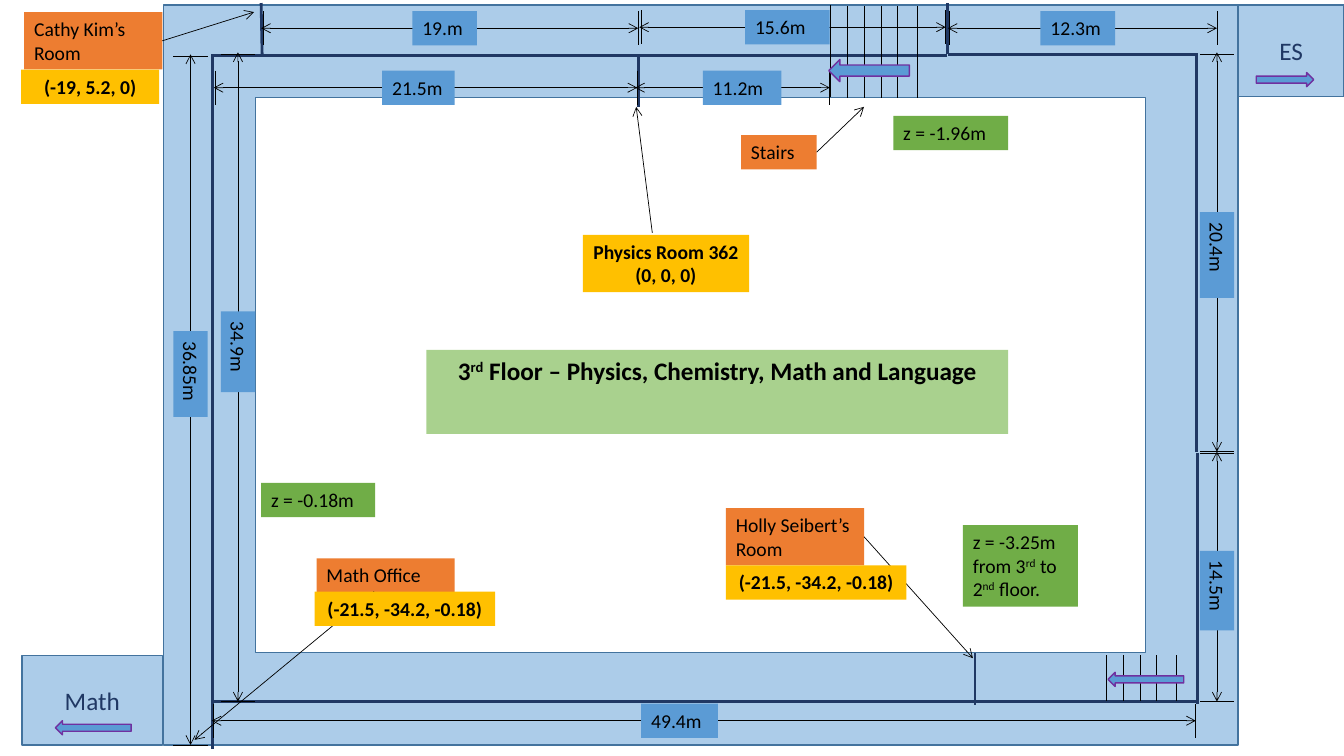
from lxml import etree
from pptx import Presentation
from pptx.dml.color import RGBColor
from pptx.enum.shapes import MSO_CONNECTOR, MSO_SHAPE
from pptx.enum.text import MSO_ANCHOR, MSO_AUTO_SIZE, PP_ALIGN
from pptx.oxml.ns import qn
from pptx.util import Cm, Pt

STRAIGHT = MSO_CONNECTOR.STRAIGHT
RECTANGLE, FRAME = MSO_SHAPE.RECTANGLE, MSO_SHAPE.FRAME
LEFT_ARROW, RIGHT_ARROW = MSO_SHAPE.LEFT_ARROW, MSO_SHAPE.RIGHT_ARROW
TOP, MIDDLE = MSO_ANCHOR.TOP, MSO_ANCHOR.MIDDLE
LEFT, CENTER = PP_ALIGN.LEFT, PP_ALIGN.CENTER
FIT_SHAPE, FIT_NONE = MSO_AUTO_SIZE.SHAPE_TO_FIT_TEXT, MSO_AUTO_SIZE.NONE
RIGHT_SIDE = 3

BLACK, NAVY, BLUE, BLUE_EDGE = "000000", "203864", "5B9BD5", "43739E"
ORANGE, GREEN, GOLD, LIGHT_GREEN, PURPLE = "ED7D31", "70AD47", "FFC000", "A9D18E", "7030A0"
LABEL_HEIGHT = 0.34
TICK_INSET = 0.02
STEP_OFFSETS = (0, 0.17, 0.34, 0.5, 0.7)

WALLS = [
    (2.11, 0.55, 6.32, 0.55), (6.32, 0.55, 9.39, 0.55), (2.59, 0.03, 2.6, 0.55),
    (6.33, 0.55, 6.33, 1.06), (9.4, 0.03, 9.4, 0.54), (9.4, 0.54, 11.88, 0.54),
    (2.11, 0.54, 2.11, 7.43), (2.12, 6.96, 11.88, 6.96), (11.87, 0.54, 11.87, 4.48),
    (11.88, 4.49, 11.88, 6.98), (9.67, 6.99, 9.67, 6.48),
]
HORIZONTAL_DIMENSIONS = [
    ("19.m", 2.59, 6.33, 0.28, 4.41, 0.64), ("21.5m", 2.12, 6.32, 0.87, 4.15, 0.72),
    ("15.6m", 6.34, 9.38, 0.27, 7.81, 0.84), ("12.3m", 9.4, 12.07, 0.28, 10.69, 0.74),
    ("11.2m", 6.3, 8.23, 0.87, 7.36, 0.78), ("49.4m", 2.1, 11.86, 7.15, 6.74, 0.76),
]
VERTICAL_DIMENSIONS = [
    ("34.9m", 0.52, 6.96, 2.36, 3.49, 0.8), ("36.85m", 0.54, 7.39, 1.89, 3.71, 0.85),
    ("20.4m", 0.52, 4.48, 12.07, 2.53, 0.85), ("14.5m", 4.48, 6.96, 12.07, 5.86, 0.79),
]
ROOMS = [
    ("Cathy Kim’s Room", (0.24, 0.12, 1.37, 0.57), (2.52, 0.12)),
    ("Holly Seibert’s Room", (7.2, 5.04, 1.37, 0.57), (9.65, 6.53)),
    ("Stairs", (7.35, 1.34, 0.75, LABEL_HEIGHT), (8.57, 1.06)),
]
HEIGHTS = [
    ("z = -1.96m", (8.86, 1.15, 1.14, LABEL_HEIGHT)),
    ("z = -0.18m", (2.59, 4.79, 1.13, LABEL_HEIGHT)),
    ("z = -3.25m from 3^rd^ to 2^nd^ floor.", (9.55, 5.21, 1.14, 0.81)),
]
COORDINATES = [
    ("(-19, 5.2, 0)", (0.21, 0.69, 1.37, LABEL_HEIGHT)),
    ("(-21.5, -34.2, -0.18)", (3.12, 5.87, 1.79, LABEL_HEIGHT)),
    ("(-21.5, -34.2, -0.18)", (7.2, 5.61, 1.79, LABEL_HEIGHT)),
    ("Physics Room 362\n(0, 0, 0)", (5.78, 2.33, 1.65, 0.57)),
]
WINGS = [("Math", (0.22, 6.5, 1.39, 0.89)), ("ES", (12.28, 0.05, 1.05, 0.91))]
ARROWS = [
    (LEFT_ARROW, (10.99, 6.67, 0.75, 0.14)), (LEFT_ARROW, (0.55, 7.15, 0.75, 0.14)),
    (RIGHT_ARROW, (12.46, 0.72, 0.57, 0.14)), (LEFT_ARROW, (8.22, 0.59, 0.8, 0.22)),
]


def lengths(values):
    """Turn plan measures in inches into lengths."""
    return [Cm(value * 2.54) for value in values]


def color(value):
    """Turn a hex string into a colour."""
    return RGBColor.from_string(value)


def add_block(shapes, kind, box, fill, edge=None, opacity=None):
    """Add a filled preset shape."""
    shape = shapes.add_shape(kind, *lengths(box))
    shape.shadow.inherit = False
    shape.fill.solid()
    shape.fill.fore_color.rgb = color(fill)
    if opacity:
        fill_color = shape._element.spPr.find(qn("a:solidFill"))[0]
        etree.SubElement(fill_color, qn("a:alpha"), val=str(opacity * 1000))
    if edge:
        shape.line.color.rgb = color(edge)
        shape.line.width = Pt(1)
    else:
        shape.line.fill.background()
    return shape


def write(shape, text, size=14, ink=BLACK, bold=False, align=LEFT, anchor=TOP, fit=FIT_SHAPE):
    """Write paragraphs, with the parts between carets as superscript."""
    frame = shape.text_frame
    frame.word_wrap = True
    frame.auto_size = fit
    frame.vertical_anchor = anchor
    for index, line in enumerate(text.split("\n")):
        paragraph = frame.add_paragraph() if index else frame.paragraphs[0]
        paragraph.alignment = align
        for position, piece in enumerate(line.split("^")):
            run = paragraph.add_run()
            run.text = piece
            run.font.name = "Calibri"
            run.font.size = Pt(size)
            run.font.bold = bold
            run.font.color.rgb = color(ink)
            if position % 2:
                run._r.get_or_add_rPr().set("baseline", "30000")


def add_label(shapes, text, box, fill, **style):
    """Add a borderless text label."""
    shape = add_block(shapes, RECTANGLE, box, fill)
    write(shape, text, **style)
    return shape


def add_line(shapes, ends, ink=BLACK, width=0.5, arrowheads=()):
    """Add a straight line with optional open arrowheads."""
    connector = shapes.add_connector(STRAIGHT, *lengths(ends))
    connector.line.color.rgb = color(ink)
    connector.line.width = Pt(width)
    properties = connector._element.spPr
    for end in arrowheads:
        etree.SubElement(properties.find(qn("a:ln")), qn(end), type="arrow")
    etree.SubElement(properties, qn("a:effectLst"))
    return connector


def add_dimension(slide, text, start, end, level, middle, width, vertical=False):
    """Add a measured span with end ticks and a label."""
    shapes = slide.shapes.add_group_shape().shapes
    half = LABEL_HEIGHT / 2
    spans = [(start, level, end, level)]
    spans += [(tick, level - half, tick, level + half) for tick in (start + TICK_INSET, end)]
    for index, (x1, y1, x2, y2) in enumerate(spans):
        ends = (y1, x1, y2, x2) if vertical else (x1, y1, x2, y2)
        add_line(shapes, ends, arrowheads=() if index else ("a:headEnd", "a:tailEnd"))
    x, y = (level, middle) if vertical else (middle, level)
    label = add_label(shapes, text, (x - width / 2, y - half, width, LABEL_HEIGHT), BLUE)
    label.rotation = 90 if vertical else 0


def add_stairs(slide, left, top, bottom):
    """Add a group of step lines."""
    shapes = slide.shapes.add_group_shape().shapes
    for offset in STEP_OFFSETS:
        add_line(shapes, (left + offset, top, left + offset, bottom))


def add_title(slide):
    """Place and format the floor title."""
    title = slide.shapes.title
    title.left, title.top, title.width, title.height = lengths((4.23, 3.47, 5.77, 0.4))
    title.fill.solid()
    title.fill.fore_color.rgb = color(LIGHT_GREEN)
    write(title, "3^rd^ Floor – Physics, Chemistry, Math and Language", 18, bold=True, align=CENTER)


def main():
    """Build the floor plan slide."""
    presentation = Presentation()
    presentation.slide_width, presentation.slide_height = lengths((13.33, 7.5))
    slide = presentation.slides.add_slide(presentation.slide_layouts[5])
    shapes = slide.shapes
    add_title(slide)
    corridor = add_block(shapes, FRAME, (1.62, 0.05, 10.66, 7.34), BLUE, BLUE_EDGE, 50)
    corridor.adjustments[0] = 0.125
    for wall in WALLS:
        add_line(shapes, wall, NAVY, 2)
    for dimension in HORIZONTAL_DIMENSIONS:
        add_dimension(slide, *dimension)
    for dimension in VERTICAL_DIMENSIONS:
        add_dimension(slide, *dimension, vertical=True)
    add_line(shapes, (8.24, 0.05, 8.24, 0.96))
    add_stairs(slide, 8.4, 0.06, 0.97)
    add_stairs(slide, 10.97, 6.5, 6.95)
    for text, box, target in ROOMS:
        room = add_label(shapes, text, box, ORANGE)
        left, top, width, height = box
        pointer = add_line(shapes, (left + width, top + height / 2, *target), arrowheads=["a:tailEnd"])
        pointer.begin_connect(room, RIGHT_SIDE)
    add_label(shapes, "Math Office", (3.14, 5.54, 1.37, LABEL_HEIGHT), ORANGE)
    for ends in ((3.71, 5.87, 1.93, 7.34), (6.47, 2.31, 6.31, 1.06)):
        add_line(shapes, ends, arrowheads=["a:tailEnd"])
    for text, box in HEIGHTS:
        add_label(shapes, text, box, GREEN)
    for text, box in COORDINATES:
        add_label(shapes, text, box, GOLD, bold=True, align=CENTER)
    for text, box in WINGS:
        wing = add_block(shapes, RECTANGLE, box, BLUE, BLUE_EDGE, 50)
        write(wing, text, 18, NAVY, align=CENTER, anchor=MIDDLE, fit=FIT_NONE)
    for kind, box in ARROWS:
        add_block(shapes, kind, box, BLUE, PURPLE)
    presentation.save("out.pptx")


if __name__ == "__main__":
    main()
